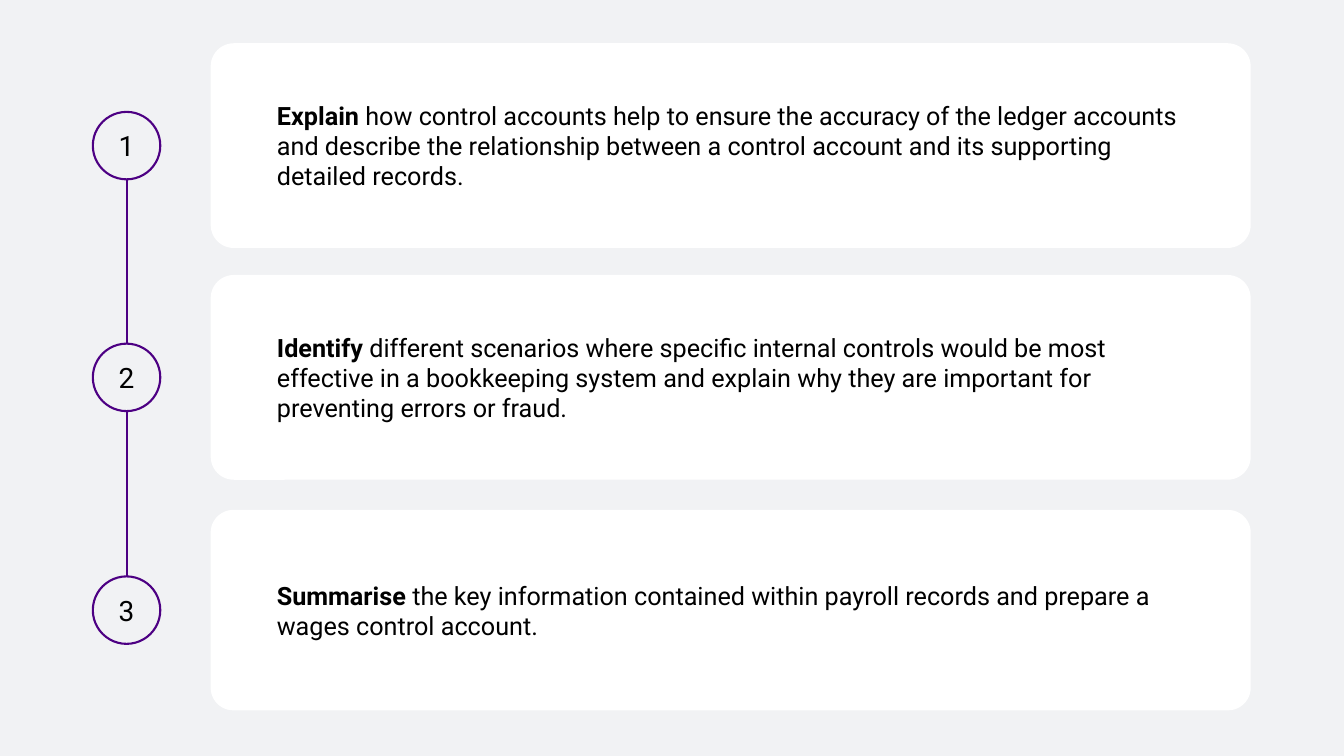
from dataclasses import dataclass

from pptx import Presentation
from pptx.dml.color import RGBColor
from pptx.enum.shapes import MSO_CONNECTOR, MSO_SHAPE
from pptx.enum.text import MSO_ANCHOR, PP_ALIGN
from pptx.oxml.ns import qn
from pptx.util import Cm, Pt


@dataclass(frozen=True)
class Theme:
    background: RGBColor = RGBColor(0xF1, 0xF2, 0xF4)
    card: RGBColor = RGBColor(0xFF, 0xFF, 0xFF)
    accent: RGBColor = RGBColor(0x4D, 0x00, 0x83)
    ink: RGBColor = RGBColor(0x00, 0x00, 0x00)
    font: str = "Roboto"
    number_size: Pt = Pt(20)
    body_size: Pt = Pt(18)
    stroke: Pt = Pt(1.5)


@dataclass(frozen=True)
class Box:
    left: int
    top: int
    width: int
    height: int

    @property
    def middle(self):
        return self.top + self.height // 2


THEME = Theme()
BADGE_CENTRE = Cm(3.19)
BADGE_DIAMETER = Cm(1.7)
CARD_LEFT = Cm(5.31)
CARD_WIDTH = Cm(26.21)
CARD_PADDING = Cm(1.5)
CARD_ROUNDING = 0.113

OBJECTIVES = [
    (Cm(1.09), Cm(5.16), "Explain ",
     "how control accounts help to ensure the accuracy of the ledger accounts and describe "
     "the relationship between a control account and its supporting detailed records."),
    (Cm(6.93), Cm(5.16), "Identify ",
     "different scenarios where specific internal controls would be most effective in a "
     "bookkeeping system and explain why they are important for preventing errors or fraud."),
    (Cm(12.85), Cm(5.05), "Summarise ",
     "the key information contained within payroll records and prepare a wages control account."),
]


def add_run(paragraph, text, size, bold=False):
    run = paragraph.add_run()
    run.text = text
    run.font.name = THEME.font
    run.font.size = size
    run.font.bold = bold
    run.font.color.rgb = THEME.ink


def add_panel(slide, preset, box, fill):
    panel = slide.shapes.add_shape(preset, box.left, box.top, box.width, box.height)
    panel.shadow.inherit = False
    panel.fill.solid()
    panel.fill.fore_color.rgb = fill
    panel.text_frame.word_wrap = True
    panel.text_frame.vertical_anchor = MSO_ANCHOR.MIDDLE
    return panel


def draw_timeline(slide, first, last):
    timeline = slide.shapes.add_connector(
        MSO_CONNECTOR.STRAIGHT, BADGE_CENTRE, first.middle, BADGE_CENTRE, last.middle)
    timeline.line.color.rgb = THEME.accent
    timeline.line.width = THEME.stroke
    properties = timeline._element.spPr
    properties.append(properties.makeelement(qn("a:effectLst"), {}))


def draw_badge(slide, box, number):
    badge = add_panel(slide, MSO_SHAPE.OVAL, box, THEME.background)
    badge.line.color.rgb = THEME.accent
    badge.line.width = THEME.stroke
    paragraph = badge.text_frame.paragraphs[0]
    paragraph.alignment = PP_ALIGN.CENTER
    add_run(paragraph, str(number), THEME.number_size)


def draw_card(slide, box, verb, detail):
    card = add_panel(slide, MSO_SHAPE.ROUNDED_RECTANGLE, box, THEME.card)
    card.adjustments[0] = CARD_ROUNDING
    card.line.fill.background()
    frame = card.text_frame
    frame.margin_left = frame.margin_right = CARD_PADDING
    frame.margin_top = frame.margin_bottom = CARD_PADDING
    paragraph = frame.paragraphs[0]
    paragraph.alignment = PP_ALIGN.LEFT
    add_run(paragraph, verb, THEME.body_size, bold=True)
    add_run(paragraph, detail, THEME.body_size)


def build_objectives_slide(presentation):
    slide = presentation.slides.add_slide(presentation.slide_layouts[6])
    slide.background.fill.solid()
    slide.background.fill.fore_color.rgb = THEME.background

    card_boxes = [Box(CARD_LEFT, top, CARD_WIDTH, height) for top, height, _, _ in OBJECTIVES]
    draw_timeline(slide, card_boxes[0], card_boxes[-1])
    radius = BADGE_DIAMETER // 2
    for number, (box, objective) in enumerate(zip(card_boxes, OBJECTIVES), start=1):
        _, _, verb, detail = objective
        badge_box = Box(BADGE_CENTRE - radius, box.middle - radius, BADGE_DIAMETER, BADGE_DIAMETER)
        draw_badge(slide, badge_box, number)
        draw_card(slide, box, verb, detail)


def main():
    presentation = Presentation()
    presentation.slide_width = Cm(33.87)
    presentation.slide_height = Cm(19.05)
    build_objectives_slide(presentation)
    presentation.save("out.pptx")


if __name__ == "__main__":
    main()
